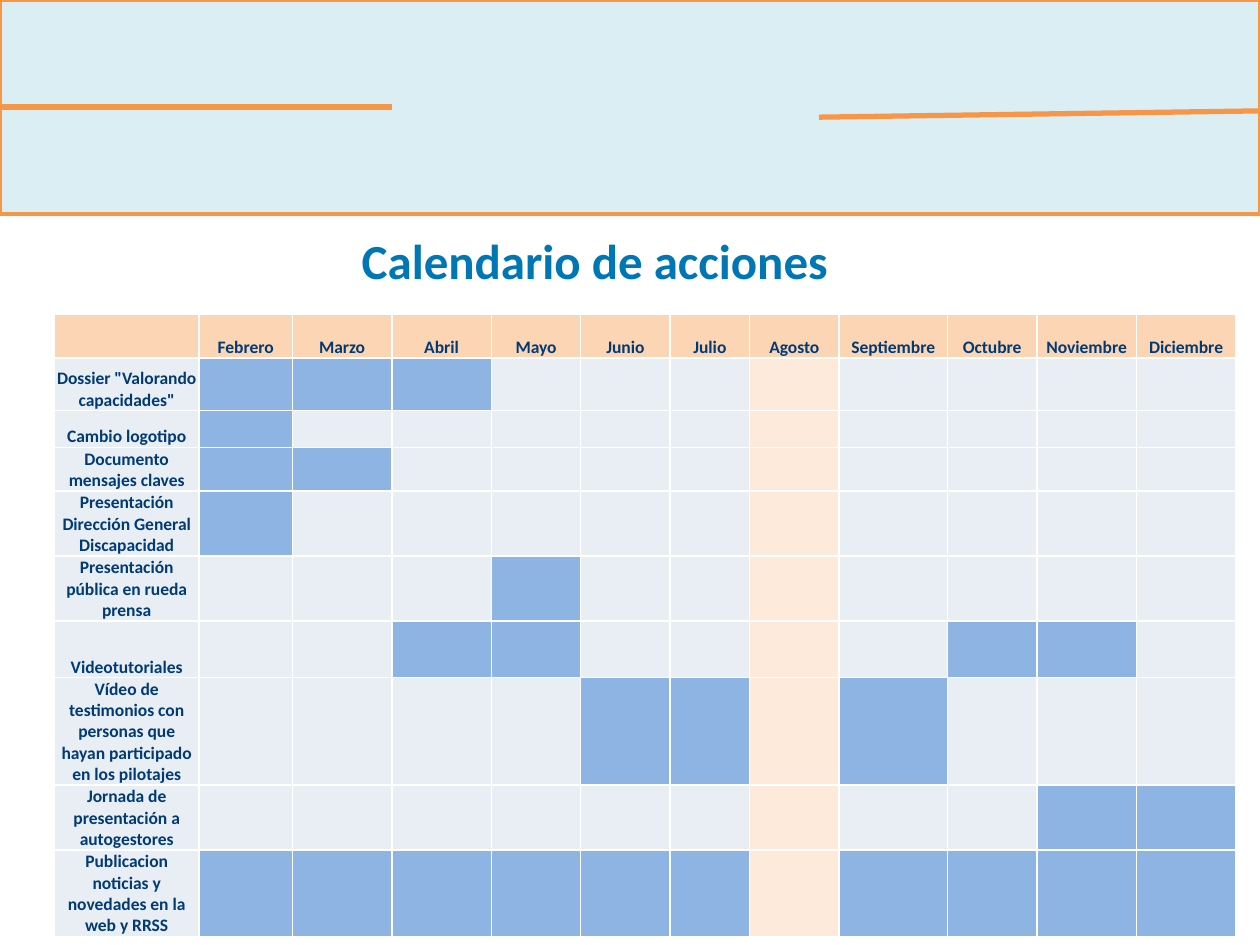
import pptx
import pptx.util
import pptx.dml.color
import pptx.enum.shapes
import pptx.enum.text
import pptx.oxml.ns
from lxml import etree

Inches, Pt = pptx.util.Inches, pptx.util.Pt
RGBColor = pptx.dml.color.RGBColor
CENTER = pptx.enum.text.PP_ALIGN.CENTER
qn = pptx.oxml.ns.qn

BAND = RGBColor(0xDB, 0xEE, 0xF4)
ORANGE = RGBColor(0xF7, 0x96, 0x46)
TITLE = RGBColor(0x00, 0x77, 0xB5)
NAVY = RGBColor(0x00, 0x3B, 0x75)
HEADER = RGBColor(0xFC, 0xD5, 0xB5)
IDLE = RGBColor(0xE9, 0xED, 0xF4)
ACTIVE = RGBColor(0x8E, 0xB4, 0xE3)
HOLIDAY = RGBColor(0xFD, 0xEA, 0xDA)

# month and column width
MONTHS = [("Febrero", 0.74), ("Marzo", 0.79), ("Abril", 0.79), ("Mayo", 0.71),
          ("Junio", 0.71), ("Julio", 0.63), ("Agosto", 0.71), ("Septiembre", 0.86),
          ("Octubre", 0.71), ("Noviembre", 0.79), ("Diciembre", 0.79)]
LABEL_WIDTH, HEADER_HEIGHT = 1.15, 0.35
HOLIDAY_MONTH = "Agosto"
# action, row height, active months
ACTIONS = [
    ('Dossier "Valorando capacidades"', 0.42, ["Febrero", "Marzo", "Abril"]),
    ("Cambio logotipo", 0.29, ["Febrero"]),
    ("Documento mensajes claves", 0.28, ["Febrero", "Marzo"]),
    ("Presentación Dirección General Discapacidad", 0.36, ["Febrero"]),
    ("Presentación pública en rueda prensa", 0.41, ["Mayo"]),
    ("Videotutoriales", 0.45, ["Abril", "Mayo", "Octubre", "Noviembre"]),
    ("Vídeo de testimonios con personas que hayan participado en los pilotajes",
     0.6, ["Junio", "Julio", "Septiembre"]),
    ("Jornada de presentación a autogestores", 0.45, ["Noviembre", "Diciembre"]),
    ("Publicacion noticias y novedades en la web y RRSS", 0.54,
     [m for m, _ in MONTHS if m != HOLIDAY_MONTH]),
]
BAND_LINES = [(0, 0.85, 3.11, 0.85), (6.5, 0.93, 10, 0.88)]


def set_font(p, size, color):
    p.alignment = CENTER
    p.font.name, p.font.size, p.font.bold = "Calibri", Pt(size), True
    p.font.color.rgb = color


def add_borders(cell):
    tcPr = cell._tc.get_or_add_tcPr()
    for side in ("a:lnL", "a:lnR", "a:lnT", "a:lnB"):
        ln = etree.SubElement(tcPr, qn(side), w=str(Pt(1)))
        fill = etree.SubElement(ln, qn("a:solidFill"))
        etree.SubElement(fill, qn("a:srgbClr"), val="FFFFFF")


def fill_cell(cell, color, text=""):
    add_borders(cell)
    cell.fill.solid()
    cell.fill.fore_color.rgb = color
    cell.margin_left = cell.margin_right = cell.margin_top = Inches(0.01)
    cell.margin_bottom = 0
    cell.vertical_anchor = pptx.enum.text.MSO_ANCHOR.BOTTOM
    p = cell.text_frame.paragraphs[0]
    if text:
        p.text = text
    set_font(p, 10, NAVY)
    if not text:  # an empty cell takes its line height from here
        etree.SubElement(p._p, qn("a:endParaRPr"), sz="1000")


def month_color(month, active):
    if month == HOLIDAY_MONTH:
        return HOLIDAY
    return ACTIVE if month in active else IDLE


prs = pptx.Presentation()
prs.slide_width, prs.slide_height = Inches(10), Inches(7.5)
s = prs.slides.add_slide(prs.slide_layouts[5])

band = s.shapes.add_shape(pptx.enum.shapes.MSO_SHAPE.RECTANGLE, 0, 0,
                          prs.slide_width, Inches(1.7))
band.shadow.inherit = False
band.fill.solid()
band.fill.fore_color.rgb = BAND
band.line.color.rgb = ORANGE
band.line.width = Pt(2)

for ends in BAND_LINES:
    line = s.shapes.add_connector(pptx.enum.shapes.MSO_CONNECTOR.STRAIGHT,
                                  *map(Inches, ends))
    line.line.color.rgb = ORANGE
    line.line.width = Pt(3)
    etree.SubElement(line._element.spPr, qn("a:effectLst"))

title = s.shapes.title
title.left, title.top, title.width, title.height = map(Inches, (1.61, 1.78, 6.22, 0.57))
title.text_frame.text = "Calendario de acciones"
set_font(title.text_frame.paragraphs[0], 28, TITLE)

widths = [LABEL_WIDTH] + [w for _, w in MONTHS]
heights = [HEADER_HEIGHT] + [h for _, h, _ in ACTIONS]
table = s.shapes.add_table(len(heights), len(widths), Inches(0.43), Inches(2.49),
                           Inches(sum(widths)), Inches(sum(heights))).table
for column, width in zip(table.columns, widths):
    column.width = Inches(width)
for row, height in zip(table.rows, heights):
    row.height = Inches(height)

fill_cell(table.cell(0, 0), HEADER)
for c, (month, _) in enumerate(MONTHS, 1):
    fill_cell(table.cell(0, c), HEADER, month)
for r, (action, _, active) in enumerate(ACTIONS, 1):
    fill_cell(table.cell(r, 0), IDLE, action)
    for c, (month, _) in enumerate(MONTHS, 1):
        fill_cell(table.cell(r, c), month_color(month, active))

prs.save("out.pptx")
